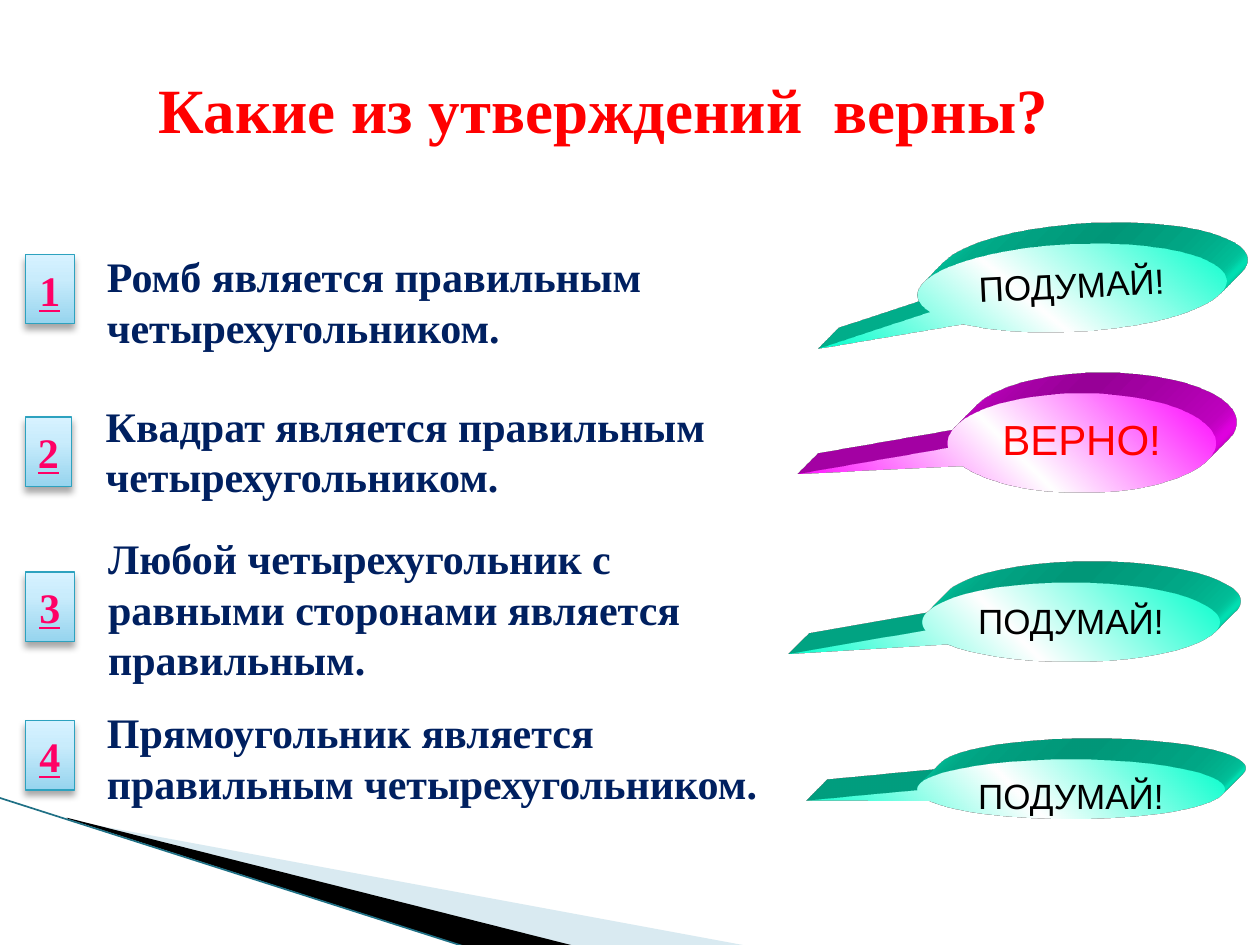
from dataclasses import dataclass

from lxml import etree
from pptx import Presentation
from pptx import util as u
from pptx.dml.color import RGBColor
from pptx.enum import shapes, text
from pptx.oxml import parse_xml
from pptx.oxml.ns import nsdecls, qn

SERIF, SANS = "Times New Roman", "Arial"
MINT, MAGENTA, RED, NAVY, PINK, BLACK = (
    "00FFCC", "FF00FF", "FF0000", "002060", "FF0066", "000000")
STATEMENT_FORMAT = {"name": SERIF, "size": u.Pt(24), "bold": True}
TITLE_FORMAT = {**STATEMENT_FORMAT, "size": u.Pt(36)}
NUMBER_FORMAT = {**STATEMENT_FORMAT, "underline": True}
BUTTON_STOPS = ((0, "96D4EE"), (65, "C9ECFC"), (100, "D7F2FF"))

BUTTON_SHADOW = (
    f'<a:effectLst {nsdecls("a")}><a:outerShdw blurRad="50800" dist="38100" '
    'dir="5400000" rotWithShape="0"><a:srgbClr val="000000">'
    '<a:alpha val="35000"/></a:srgbClr></a:outerShdw></a:effectLst>')
OBLIQUE_SCENE = (
    f'<a:scene3d {nsdecls("a")}><a:camera prst="legacyObliqueTopRight"/>'
    '<a:lightRig rig="legacyFlat3" dir="b"/></a:scene3d>')


@dataclass(frozen=True)
class Box:
    left: float
    top: float
    width: float
    height: float

    def emu(self) -> tuple:
        return tuple(u.Inches(v) for v in
                     (self.left, self.top, self.width, self.height))


@dataclass(frozen=True)
class Answer:
    verdict: str
    box: Box
    tail: tuple
    tint: str = MINT
    color: str = BLACK
    size: int = 20
    rotation: float = 0


@dataclass(frozen=True)
class Statement:
    wording: str
    box: Box
    button: Box
    answer: Answer


STATEMENTS = (
    Statement("Ромб является правильным четырехугольником.",
              Box(0.75, 1.94, 5.51, 0.91), Box(0.2, 2.02, 0.39, 0.55),
              Answer("ПОДУМАЙ!", Box(7.28, 1.94, 2.45, 0.69),
                     (-0.83, 0.55), rotation=357.2)),
    Statement("Квадрат является правильным четырехугольником.",
              Box(0.74, 3.13, 5.43, 0.91), Box(0.2, 3.31, 0.37, 0.55),
              Answer("ВЕРНО!", Box(7.52, 3.12, 2.13, 0.79),
                     (-1.06, 0.31), MAGENTA, RED, 24)),
    Statement("Любой четырехугольник с равными сторонами является правильным.",
              Box(0.76, 4.18, 5.04, 1.31), Box(0.2, 4.54, 0.39, 0.55),
              Answer("ПОДУМАЙ!", Box(7.32, 4.62, 2.36, 0.63), (-0.95, 0.4))),
    Statement("Прямоугольник является правильным четырехугольником.",
              Box(0.75, 5.56, 5.98, 0.91), Box(0.2, 5.72, 0.39, 0.55),
              Answer("ПОДУМАЙ!", Box(7.28, 6.03, 2.44, 0.47), (-0.86, 0.19))),
)


def rgb(color: str) -> RGBColor:
    return RGBColor.from_string(color)


def write(shape, wording: str, color: str, formats: dict,
          align=text.PP_ALIGN.CENTER, wrap: bool = False) -> None:
    frame = shape.text_frame
    frame.word_wrap = wrap
    paragraph = frame.paragraphs[0]
    paragraph.alignment = align
    run = paragraph.add_run()
    run.text = wording
    for attribute, value in formats.items():
        setattr(run.font, attribute, value)
    run.font.color.rgb = rgb(color)


def fill_gradient(shape, stops: tuple, angle: int) -> None:
    """Fill with (percent, colour) stops; the angle runs clockwise."""
    shape.fill.gradient()
    shape.fill.gradient_angle = 360 - angle
    stop_list = shape._element.spPr.find(f".//{qn('a:gsLst')}")
    for stop in list(stop_list):
        stop_list.remove(stop)
    for percent, color in stops:
        stop = etree.SubElement(stop_list, qn("a:gs"), pos=str(percent * 1000))
        etree.SubElement(stop, qn("a:srgbClr"), val=color)


def draw_wedge(slide, points: tuple, color: str, opacity: int = 100) -> None:
    corners = [(u.Inches(x), u.Inches(y)) for x, y in points]
    builder = slide.shapes.build_freeform(*corners[0])
    builder.add_line_segments(corners[1:], close=True)
    wedge = builder.convert_to_shape()
    wedge.shadow.inherit = False
    wedge.fill.solid()
    wedge.fill.fore_color.rgb = rgb(color)
    wedge.line.fill.background()
    if opacity < 100:
        tone = wedge._element.spPr.find(f".//{qn('a:srgbClr')}")
        etree.SubElement(tone, qn("a:alpha"), val=str(opacity * 1000))


def draw_corner(slide) -> None:
    draw_wedge(slide, ((0.55, 6.51), (5.95, 7.51), (4.56, 7.51), (0.55, 6.5)),
               "A0CBDC", 40)
    draw_wedge(slide, ((0.53, 6.49), (4.57, 7.51), (3.72, 7.52), (0.54, 6.5)),
               BLACK)
    edge = slide.shapes.add_connector(
        shapes.MSO_CONNECTOR.STRAIGHT,
        *(u.Inches(v) for v in (-0.01, 6.33, 3.71, 7.52)))
    edge.line.color.rgb = rgb("1F7085")
    edge.line.width = u.Pt(0.95)
    etree.SubElement(edge._element.spPr, qn("a:effectLst"))


def draw_button(slide, number: int, box: Box) -> None:
    button = slide.shapes.add_shape(
        shapes.MSO_SHAPE.ACTION_BUTTON_CUSTOM, *box.emu())
    fill_gradient(button, BUTTON_STOPS, 270)
    button.line.color.rgb = rgb("2DA2BF")
    button.line.width = u.Pt(0.75)
    button._element.spPr.append(parse_xml(BUTTON_SHADOW))
    button.text_frame.vertical_anchor = text.MSO_ANCHOR.MIDDLE
    write(button, str(number), PINK, NUMBER_FORMAT)


def draw_answer(slide, answer: Answer) -> None:
    """Draw an extruded callout with its verdict."""
    callout = slide.shapes.add_shape(
        shapes.MSO_SHAPE.OVAL_CALLOUT, *answer.box.emu())
    callout.rotation = answer.rotation
    for index, offset in enumerate(answer.tail):
        callout.adjustments[index] = offset
    fill_gradient(callout, ((0, answer.tint), (50, "FFFFFF"),
                            (100, answer.tint)), 315)
    callout.line.fill.background()
    callout.shadow.inherit = False
    extrusion = (
        f'<a:sp3d {nsdecls("a")} extrusionH="430200" '
        'prstMaterial="legacyMatte"><a:extrusionClr>'
        f'<a:srgbClr val="{answer.tint}"/></a:extrusionClr></a:sp3d>')
    for part in (OBLIQUE_SCENE, extrusion):
        callout._element.spPr.append(parse_xml(part))
    callout.text_frame.vertical_anchor = text.MSO_ANCHOR.TOP
    write(callout, answer.verdict, answer.color,
          {"name": SANS, "size": u.Pt(answer.size)})


def main() -> None:
    deck = Presentation()
    deck.slide_width, deck.slide_height = u.Inches(10), u.Inches(7.5)
    slide = deck.slides.add_slide(deck.slide_layouts[6])
    draw_corner(slide)
    title = slide.shapes.add_textbox(*Box(0.5, 0.51, 8.58, 0.71).emu())
    write(title, "Какие из утверждений  верны?", RED, TITLE_FORMAT, wrap=True)
    for number, statement in enumerate(STATEMENTS, start=1):
        draw_button(slide, number, statement.button)
        draw_answer(slide, statement.answer)
        wording = slide.shapes.add_textbox(*statement.box.emu())
        write(wording, statement.wording, NAVY, STATEMENT_FORMAT,
              text.PP_ALIGN.LEFT, wrap=True)
    deck.save("out.pptx")


if __name__ == "__main__":
    main()
